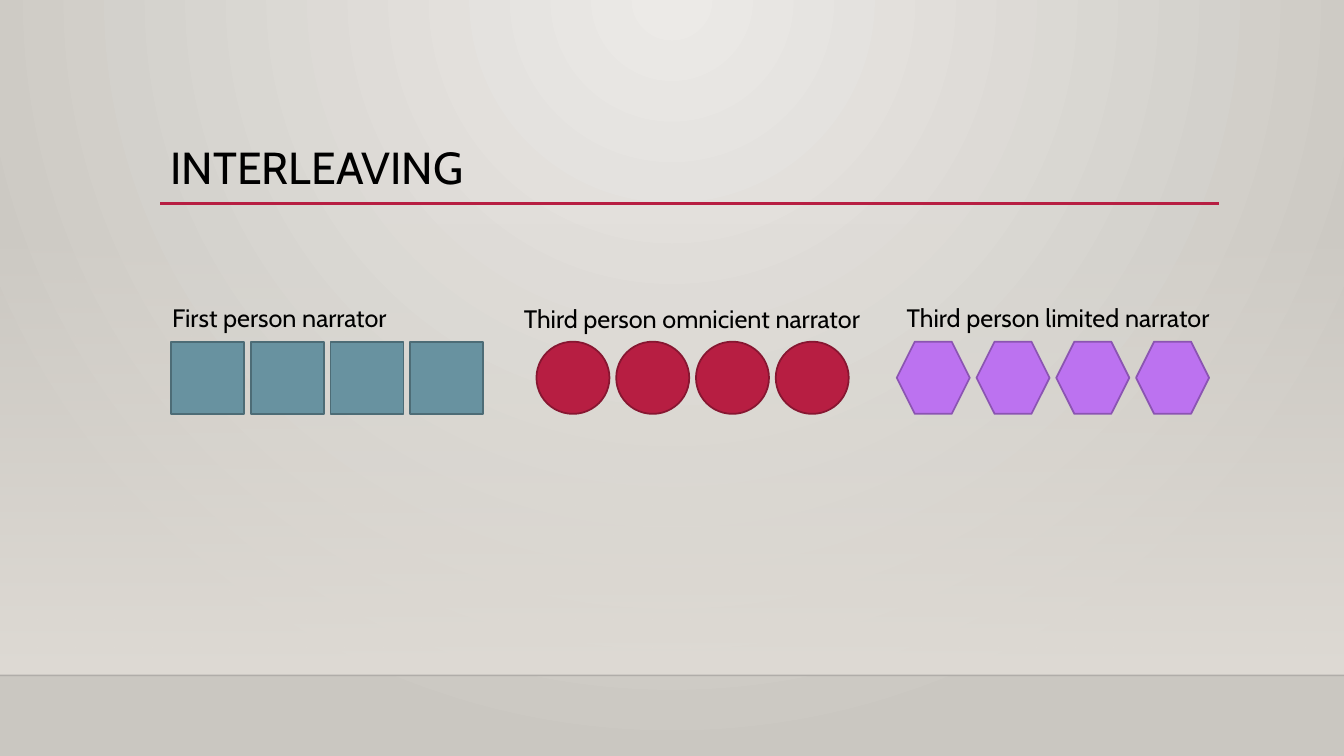
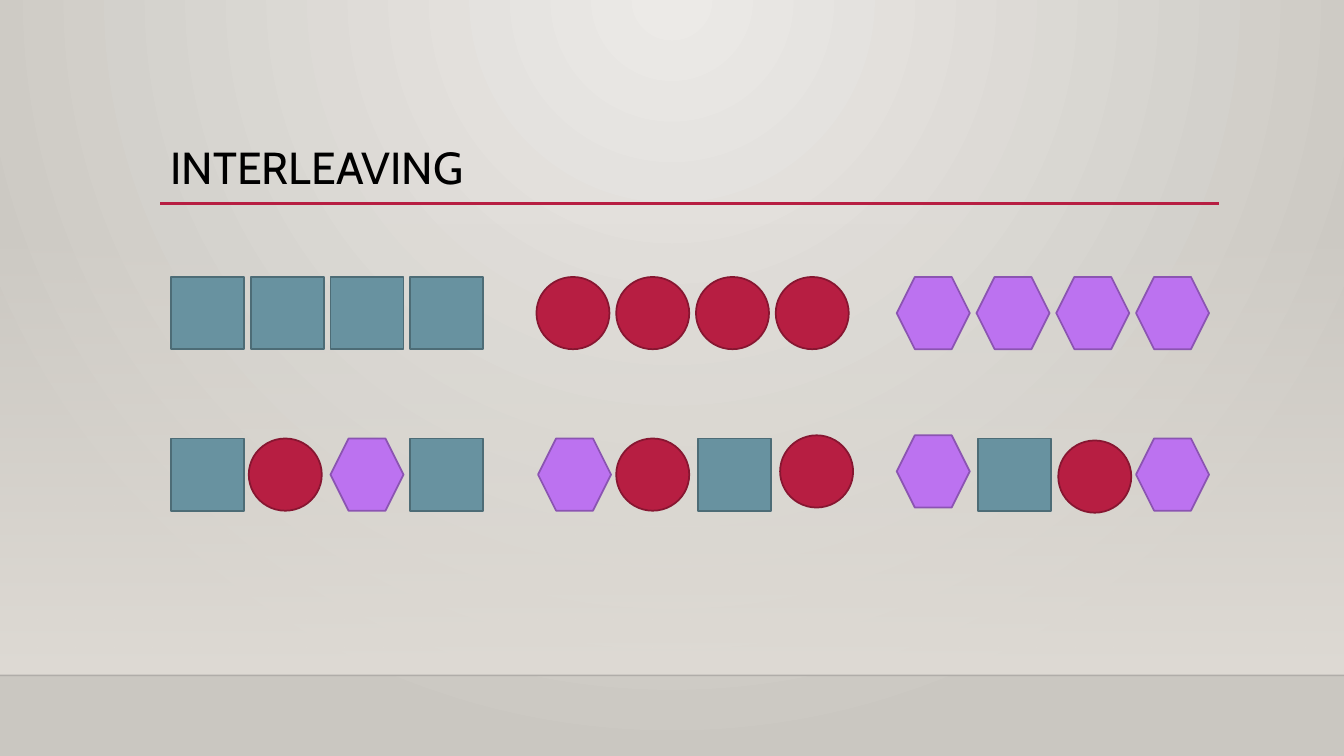
"""Build two slides on interleaving: blocked practice, then mixed practice."""
from lxml.etree import SubElement
from pptx import Presentation
from pptx.dml.color import RGBColor
from pptx.enum.shapes import MSO_CONNECTOR, MSO_SHAPE
from pptx.enum.text import MSO_ANCHOR
from pptx.oxml.ns import qn
from pptx.util import Cm, Pt

COLOURS = {
    "glow": "ECEAE7", "edge": "CAC7C1", "floor": "DFDBD5", "horizon": "000001",
    "rule": "B71E42", "text": "000000",
    "square": "6892A0", "square line": "4D6C76",
    "circle": "B71E42", "circle line": "871631",
    "hexagon": "BC72F0", "hexagon line": "8B54B2",
}
PRESETS = {
    "square": MSO_SHAPE.RECTANGLE,
    "circle": MSO_SHAPE.FLOWCHART_CONNECTOR,
    "hexagon": MSO_SHAPE.HEXAGON,
}
FONT = "Cabin"
WIDTH, HEIGHT = 33.87, 19.05
HORIZON_TOP = 17.02
TOKEN_WIDTH, TOKEN_HEIGHT, TOKEN_STEP = 1.84, 1.82, 2.01
GROUP_LEFTS = {"square": 4.31, "circle": 13.52, "hexagon": 22.6}
BLOCKED = [(kind, left + i * TOKEN_STEP)
           for kind, left in GROUP_LEFTS.items() for i in range(4)]
MIXED = [
    ("square", 4.31, 11.05), ("circle", 6.27, 11.05),
    ("hexagon", 8.33, 11.05), ("square", 10.34, 11.05),
    ("hexagon", 13.56, 11.05), ("circle", 15.53, 11.05),
    ("square", 17.6, 11.05), ("circle", 19.66, 10.97),
    ("hexagon", 22.6, 10.97), ("square", 24.64, 11.05),
    ("circle", 26.67, 11.1), ("hexagon", 28.63, 11.05),
]
LABELS = [
    ("First person narrator", 4.09, 7.49, 6.2),
    ("Third person omnicient narrator", 12.95, 7.52, 9.2),
    ("Third person limited narrator", 22.6, 7.49, 8.41),
]
SLIDES = [
    {"tokens": [(kind, left, 8.61) for kind, left in BLOCKED], "labels": LABELS},
    {"tokens": [(kind, left, 6.98) for kind, left in BLOCKED] + MIXED, "labels": []},
]


def colour(name):
    return RGBColor.from_string(COLOURS[name])


def add_text(page, text, size, left, top, width, height, anchor):
    box = page.shapes.add_textbox(Cm(left), Cm(top), Cm(width), Cm(height))
    frame = box.text_frame
    frame.word_wrap = True
    frame.vertical_anchor = anchor
    para = frame.paragraphs[0]
    span = para.add_run()
    span.text = text
    span.font.name = FONT
    span.font.size = Pt(size)
    span.font.color.rgb = colour("text")


deck = Presentation()
deck.slide_width, deck.slide_height = Cm(WIDTH), Cm(HEIGHT)

for content in SLIDES:
    page = deck.slides.add_slide(deck.slide_layouts[6])

    backdrop = page.background.fill
    backdrop.gradient()
    for stop, name in zip(backdrop.gradient_stops, ("glow", "edge")):
        stop.color.rgb = colour(name)
    gradient = next(page.element.iter(qn("a:gradFill")))
    gradient.remove(gradient.find(qn("a:lin")))
    radial = SubElement(gradient, qn("a:path"), {"path": "circle"})
    SubElement(radial, qn("a:fillToRect"),
               {"l": "43000", "t": "0", "r": "43000", "b": "100000"})

    floor = page.shapes.add_shape(MSO_SHAPE.RECTANGLE, Cm(0), Cm(5.61),
                                  Cm(WIDTH), Cm(HORIZON_TOP - 5.61))
    floor.shadow.inherit = False
    floor.line.fill.background()
    floor.fill.gradient()
    floor.fill.gradient_angle = 270
    for stop in floor.fill.gradient_stops:
        stop.color.rgb = colour("floor")
    clear = next(floor.element.iter(qn("a:srgbClr")))
    SubElement(clear, qn("a:alpha"), {"val": "0"})

    for name, left, right, top, weight, opacity in (
            ("horizon", 0, WIDTH, HORIZON_TOP, 1, 20),
            ("rule", 4.04, 30.73, 5.13, 2.5, 100)):
        line = page.shapes.add_connector(MSO_CONNECTOR.STRAIGHT, Cm(left), Cm(top),
                                         Cm(right), Cm(top))
        line.line.width = Pt(weight)
        line.line.color.rgb = colour(name)
        if opacity < 100:
            ink = next(line.element.iter(qn("a:srgbClr")))
            SubElement(ink, qn("a:alpha"), {"val": str(opacity * 1000)})
        SubElement(line.element.spPr, qn("a:effectLst"))

    add_text(page, "INTERLEAVING", 32, 4.04, 2.24, 26.67, 2.75, MSO_ANCHOR.BOTTOM)

    for kind, left, top in content["tokens"]:
        token = page.shapes.add_shape(PRESETS[kind], Cm(left), Cm(top),
                                      Cm(TOKEN_WIDTH), Cm(TOKEN_HEIGHT))
        token.shadow.inherit = False
        token.fill.solid()
        token.fill.fore_color.rgb = colour(kind)
        token.line.color.rgb = colour(kind + " line")
        token.line.width = Pt(1.25)

    for text, left, top, width in content["labels"]:
        add_text(page, text, 18, left, top, width, 1.02, MSO_ANCHOR.TOP)

deck.save("out.pptx")
